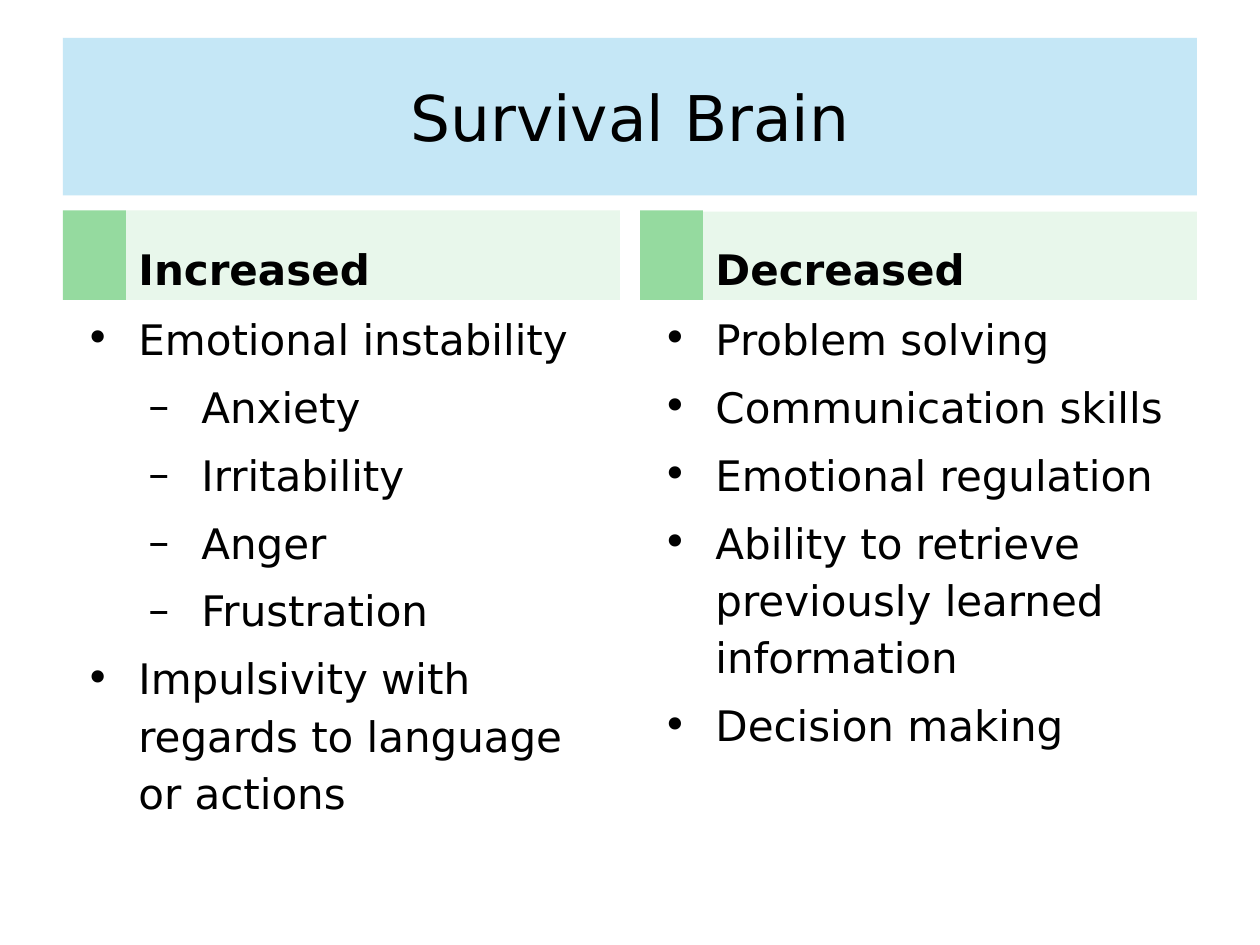
from dataclasses import dataclass

from lxml.etree import SubElement
from pptx import Presentation
from pptx.dml.color import RGBColor
from pptx.enum.shapes import MSO_SHAPE
from pptx.enum.text import MSO_ANCHOR, PP_ALIGN
from pptx.oxml.ns import qn
from pptx.shapes.autoshape import Shape
from pptx.slide import Slide
from pptx.text.text import _Paragraph as Paragraph
from pptx.util import Inches, Pt

FONT = "DejaVu Sans"
BLACK = RGBColor(0x00, 0x00, 0x00)
SKY = RGBColor(0xA9, 0xDC, 0xF2)
GREEN = RGBColor(0x95, 0xDA, 0x9F)
PALE_GREEN = RGBColor(0xE8, 0xF7, 0xEB)

MARGIN = 0.5
COLUMN_WIDTH = 4.42
COLUMN_STEP = 4.58
TAB_WIDTH = 0.5
HEADING_TOP = 1.67
LIST_TOP = 2.38
LIST_HEIGHT = 4.32
BULLETS = ("•", "–")


@dataclass
class Item:
    text: str
    level: int = 0


@dataclass
class Column:
    heading: str
    heading_top: float
    items: list[Item]


COLUMNS = [
    Column("Increased", HEADING_TOP, [
        Item("Emotional instability"),
        Item("Anxiety", 1),
        Item("Irritability", 1),
        Item("Anger", 1),
        Item("Frustration", 1),
        Item("Impulsivity with regards to language or actions"),
    ]),
    Column("Decreased", HEADING_TOP + 0.01, [
        Item("Problem solving"),
        Item("Communication skills"),
        Item("Emotional regulation"),
        Item("Ability to retrieve previously learned information"),
        Item("Decision making"),
    ]),
]


def add_box(slide: Slide, left: float, top: float, width: float,
            height: float, color: RGBColor) -> Shape:
    shape = slide.shapes.add_shape(
        MSO_SHAPE.RECTANGLE,
        Inches(left), Inches(top), Inches(width), Inches(height))
    shape.shadow.inherit = False
    shape.fill.solid()
    shape.fill.fore_color.rgb = color
    shape.line.fill.background()
    return shape


def format_text(paragraph: Paragraph, size: int, bold: bool = False) -> None:
    for run in paragraph.runs:
        run.font.name = FONT
        run.font.size = Pt(size)
        run.font.bold = bold
        run.font.color.rgb = BLACK


def write_label(shape: Shape, text: str, size: int, alignment: PP_ALIGN,
                anchor: MSO_ANCHOR, bold: bool = False) -> None:
    frame = shape.text_frame
    frame.text = text
    frame.word_wrap = True
    frame.vertical_anchor = anchor
    frame.paragraphs[0].alignment = alignment
    format_text(frame.paragraphs[0], size, bold)


def add_bullet(paragraph: Paragraph, level: int) -> None:
    properties = paragraph._p.get_or_add_pPr()
    properties.set("marL", str(Inches(0.5 * (level + 1))))
    properties.set("indent", str(Inches(-0.42)))
    color = SubElement(properties, qn("a:buClr"))
    SubElement(color, qn("a:srgbClr"), val=str(BLACK))
    SubElement(properties, qn("a:buFont"), typeface=FONT)
    SubElement(properties, qn("a:buChar"), char=BULLETS[level])


def add_list(slide: Slide, left: float, items: list[Item]) -> None:
    box = slide.shapes.add_textbox(
        Inches(left), Inches(LIST_TOP), Inches(COLUMN_WIDTH), Inches(LIST_HEIGHT))
    frame = box.text_frame
    frame.word_wrap = True
    for index, item in enumerate(items):
        paragraph = frame.add_paragraph() if index else frame.paragraphs[0]
        paragraph.text = item.text
        paragraph.level = item.level
        add_bullet(paragraph, item.level)
        paragraph.line_spacing = 1.14
        paragraph.space_after = Pt(6)
        format_text(paragraph, 24)


def add_column(slide: Slide, left: float, column: Column) -> None:
    add_box(slide, left, HEADING_TOP, TAB_WIDTH, LIST_TOP - HEADING_TOP, GREEN)
    heading = add_box(slide, left + TAB_WIDTH, column.heading_top,
                      COLUMN_WIDTH - TAB_WIDTH, LIST_TOP - column.heading_top,
                      PALE_GREEN)
    write_label(heading, column.heading, 24, PP_ALIGN.LEFT,
                MSO_ANCHOR.BOTTOM, bold=True)
    add_list(slide, left, column.items)


def main() -> None:
    presentation = Presentation()
    presentation.slide_width = Inches(10)
    presentation.slide_height = Inches(7.5)
    slide = presentation.slides.add_slide(presentation.slide_layouts[6])

    # Title band, partly transparent
    title = add_box(slide, MARGIN, 0.3, 9, 1.25, SKY)
    fill_color = title._element.spPr.find(qn("a:solidFill")).find(qn("a:srgbClr"))
    SubElement(fill_color, qn("a:alpha"), val="67000")
    write_label(title, "Survival Brain", 36, PP_ALIGN.CENTER, MSO_ANCHOR.MIDDLE)

    # Two columns
    for index, column in enumerate(COLUMNS):
        add_column(slide, MARGIN + index * COLUMN_STEP, column)

    presentation.save("out.pptx")


if __name__ == "__main__":
    main()
